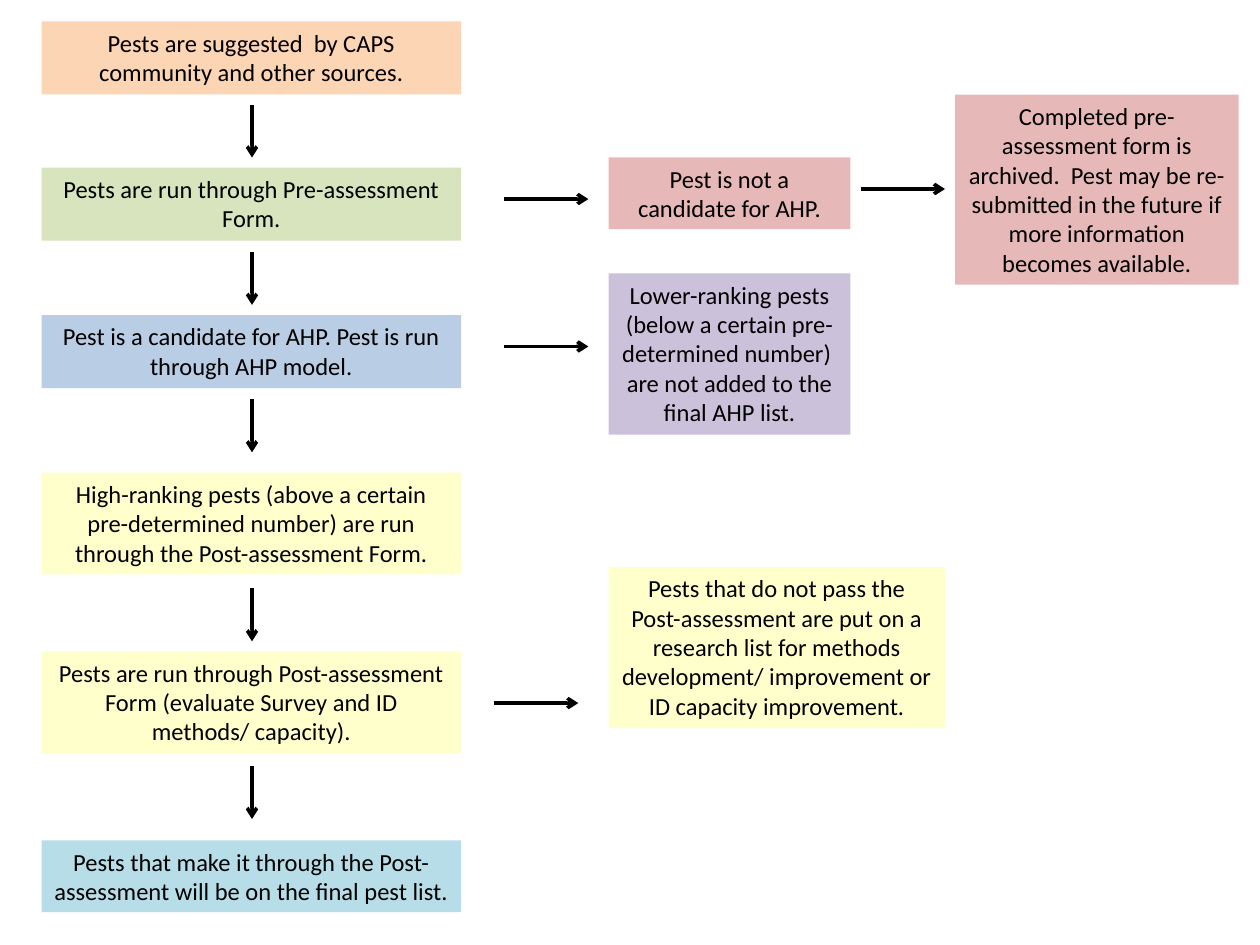
"""Build a flowchart slide of the pest assessment process."""
import pptx
import pptx.dml.color
import pptx.enum.shapes
import pptx.enum.text
import pptx.oxml
import pptx.oxml.ns
import pptx.util
from pptx.util import Inches

COLORS = {
    "orange": "FCD5B5", "green": "D7E4BD", "blue": "B9CDE5", "rose": "E6B9B8",
    "violet": "CCC1DA", "yellow": "FFFFCC", "aqua": "B7DEE8", "black": "000000",
}


def rgb(name):
    return pptx.dml.color.RGBColor.from_string(COLORS[name])


prs = pptx.Presentation()
prs.slide_width, prs.slide_height = Inches(10), Inches(7.5)
s = prs.slides.add_slide(prs.slide_layouts[6])

main_steps = [
    (0.17, 0.58, "orange", "Pests are suggested  by CAPS community and other sources."),
    (1.33, 0.58, "green", "Pests are run through Pre-assessment Form."),
    (2.5, 0.58, "blue", "Pest is a candidate for AHP. Pest is run through AHP model."),
    (3.75, 0.81, "yellow", "High-ranking pests (above a certain pre-determined number) "
     "are run through the Post-assessment Form."),
    (5.17, 0.81, "yellow", "Pests are run through Post-assessment Form "
     "(evaluate Survey and ID methods/ capacity)."),
    (6.67, 0.57, "aqua", "Pests that make it through the Post-assessment "
     "will be on the final pest list."),
]
side_steps = [
    (4.83, 1.25, 1.92, 0.57, "rose", "Pest is not a candidate for AHP."),
    (7.58, 0.75, 2.25, 1.51, "rose", "Completed pre-assessment form is archived.  Pest may be "
     "re-submitted in the future if more information becomes available."),
    (4.83, 2.17, 1.92, 1.28, "violet", "Lower-ranking pests (below a certain pre-determined "
     "number)  are not added to the final AHP list."),
    (4.83, 4.5, 2.67, 1.28, "yellow", "Pests that do not pass the Post-assessment are put on a "
     "research list for methods development/ improvement or ID capacity improvement."),
]
boxes = [(0.33, y, 3.33, h, color, text) for y, h, color, text in main_steps] + side_steps

for x, y, w, h, color, text in boxes:
    sp = s.shapes.add_textbox(Inches(x), Inches(y), Inches(w), Inches(h))
    sp.fill.solid()
    sp.fill.fore_color.rgb = rgb(color)
    tf = sp.text_frame
    tf.word_wrap = True
    tf.auto_size = pptx.enum.text.MSO_AUTO_SIZE.SHAPE_TO_FIT_TEXT
    p = tf.paragraphs[0]
    p.text = text
    p.alignment = pptx.enum.text.PP_ALIGN.CENTER
    p.font.name = "Calibri"
    p.font.size = pptx.util.Pt(14)
    p.font.color.rgb = rgb("black")

down_arrows = [(2, y, 2, y + 0.42) for y in (0.83, 2, 3.17, 4.67, 6.08)]
right_arrows = [(x, y, x + 0.67, y)
                for x, y in ((4, 1.58), (6.83, 1.5), (4, 2.75), (3.92, 5.58))]

for ends in down_arrows + right_arrows:
    line = s.shapes.add_connector(
        pptx.enum.shapes.MSO_CONNECTOR.STRAIGHT, *[Inches(v) for v in ends])
    line.line.width = pptx.util.Pt(2)
    line.line.color.rgb = rgb("black")
    tail = pptx.oxml.parse_xml(f'<a:tailEnd {pptx.oxml.ns.nsdecls("a")} type="arrow"/>')
    line.line._get_or_add_ln().append(tail)
    effects = pptx.oxml.parse_xml(f'<a:effectLst {pptx.oxml.ns.nsdecls("a")}/>')
    line._element.spPr.append(effects)

prs.save("out.pptx")
